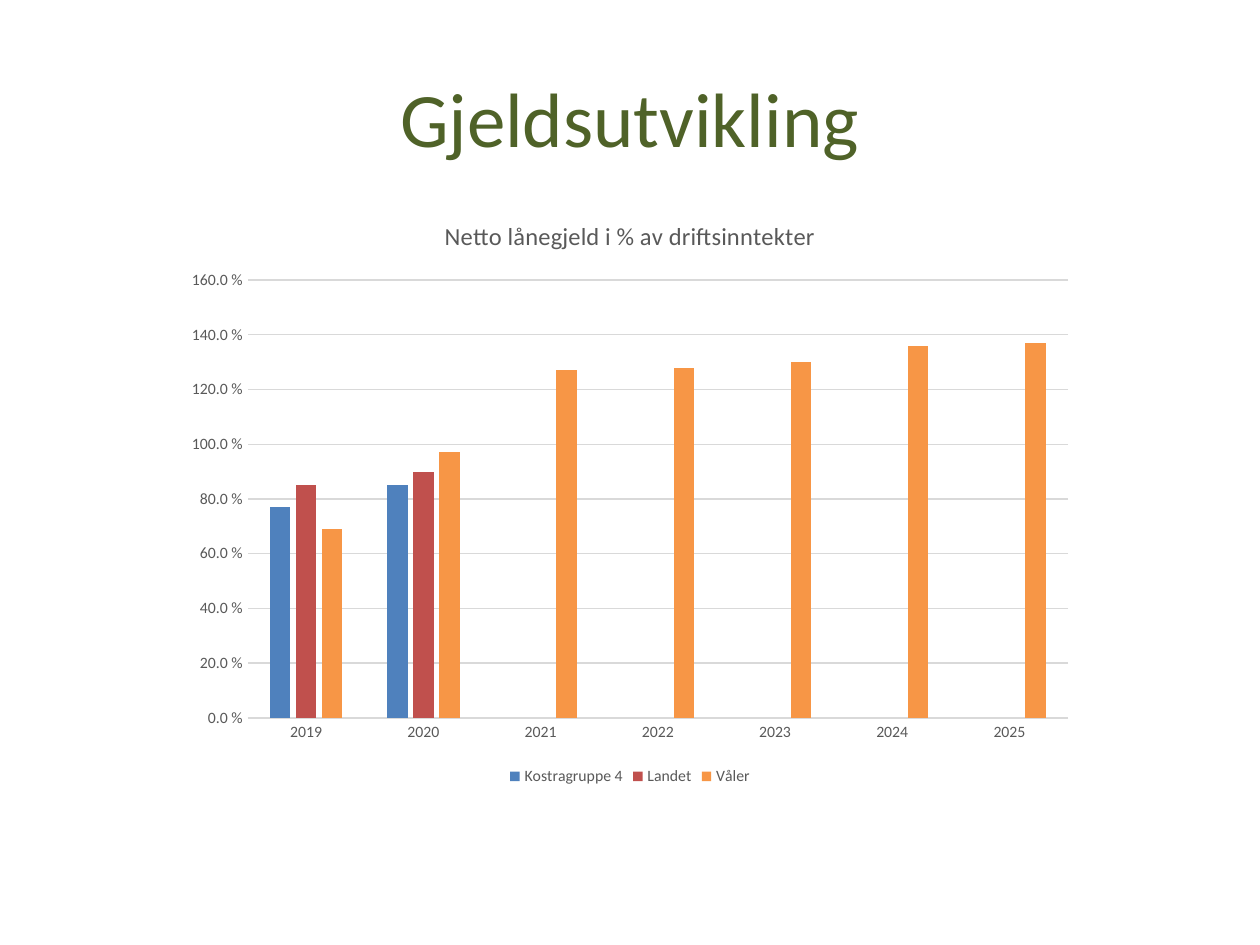
from dataclasses import dataclass
from typing import Any, Optional

import pptx
import pptx.chart.data
import pptx.dml.color
import pptx.enum.chart
import pptx.enum.text
import pptx.util

Cm = pptx.util.Cm
Pt = pptx.util.Pt
RGB = pptx.dml.color.RGBColor.from_string

COLORS = {
    "title": "4F6228",
    "text": "595959",
    "grid": "D9D9D9",
    "blue": "4F81BD",
    "red": "C0504D",
    "orange": "F79646",
}
YEARS = [str(year) for year in range(2019, 2026)]


@dataclass
class DebtSeries:
    name: str
    values: list[Optional[float]]
    color: str


SERIES = [
    DebtSeries("Kostragruppe 4", [0.77, 0.85] + [None] * 5, "blue"),
    DebtSeries("Landet", [0.85, 0.9] + [None] * 5, "red"),
    DebtSeries("Våler", [0.69, 0.97, 1.27, 1.28, 1.3, 1.36, 1.37], "orange"),
]


def set_attrs(obj: Any, values: dict[str, Any]) -> None:
    for name, value in values.items():
        setattr(obj, name, value)


def set_font(font: Any, size: float, color: str) -> None:
    set_attrs(font, {"name": "Calibri", "size": Pt(size), "bold": False})
    font.color.rgb = RGB(COLORS[color])


def set_line(line: Any) -> None:
    line.color.rgb = RGB(COLORS["grid"])
    line.width = Pt(0.75)


def add_title(s: Any, text: str) -> None:
    sp = s.shapes.title
    set_attrs(sp, {"left": Cm(1.27), "top": Cm(0.76),
                   "width": Cm(22.86), "height": Cm(3.18)})
    tf = sp.text_frame
    tf.vertical_anchor = pptx.enum.text.MSO_ANCHOR.MIDDLE
    p = tf.paragraphs[0]
    p.alignment = pptx.enum.text.PP_ALIGN.CENTER
    r = p.add_run()
    r.text = text
    set_font(r.font, 44, "title")


def add_debt_chart(s: Any, title: str) -> None:
    data = pptx.chart.data.CategoryChartData(number_format="0.0 %")
    data.categories = YEARS
    for item in SERIES:
        data.add_series(item.name, item.values)
    chart = s.shapes.add_chart(
        pptx.enum.chart.XL_CHART_TYPE.COLUMN_CLUSTERED,
        Cm(3.5), Cm(3.94), Cm(18.4), Cm(12), data).chart
    set_font(chart.font, 9, "text")

    chart.has_title = True
    tf = chart.chart_title.text_frame
    tf.text = title
    set_font(tf.paragraphs[0].runs[0].font, 14, "text")
    chart.chart_title.include_in_layout = False

    chart.has_legend = True
    set_attrs(chart.legend, {
        "position": pptx.enum.chart.XL_LEGEND_POSITION.BOTTOM,
        "include_in_layout": False,
    })
    set_font(chart.legend.font, 9, "text")

    plot = chart.plots[0]
    set_attrs(plot, {"gap_width": 219, "overlap": -27, "vary_by_categories": False})
    for series, item in zip(plot.series, SERIES):
        series.format.fill.solid()
        series.format.fill.fore_color.rgb = RGB(COLORS[item.color])
        series.invert_if_negative = False

    no_tick = pptx.enum.chart.XL_TICK_MARK.NONE
    for axis in (chart.category_axis, chart.value_axis):
        set_attrs(axis, {"major_tick_mark": no_tick, "minor_tick_mark": no_tick})
        set_font(axis.tick_labels.font, 9, "text")
    set_line(chart.category_axis.format.line)

    axis = chart.value_axis
    set_attrs(axis, {"minimum_scale": 0, "maximum_scale": 1.6, "major_unit": 0.2,
                     "has_major_gridlines": True})
    set_attrs(axis.tick_labels, {"number_format": "0.0 %",
                                 "number_format_is_linked": False})
    axis.format.line.fill.background()
    set_line(axis.major_gridlines.format.line)


def main() -> None:
    prs = pptx.Presentation()
    set_attrs(prs, {"slide_width": Cm(25.4), "slide_height": Cm(19.05)})
    s = prs.slides.add_slide(prs.slide_layouts[5])
    add_title(s, "Gjeldsutvikling")
    add_debt_chart(s, "Netto lånegjeld i % av driftsinntekter")
    prs.save("out.pptx")


if __name__ == "__main__":
    main()
